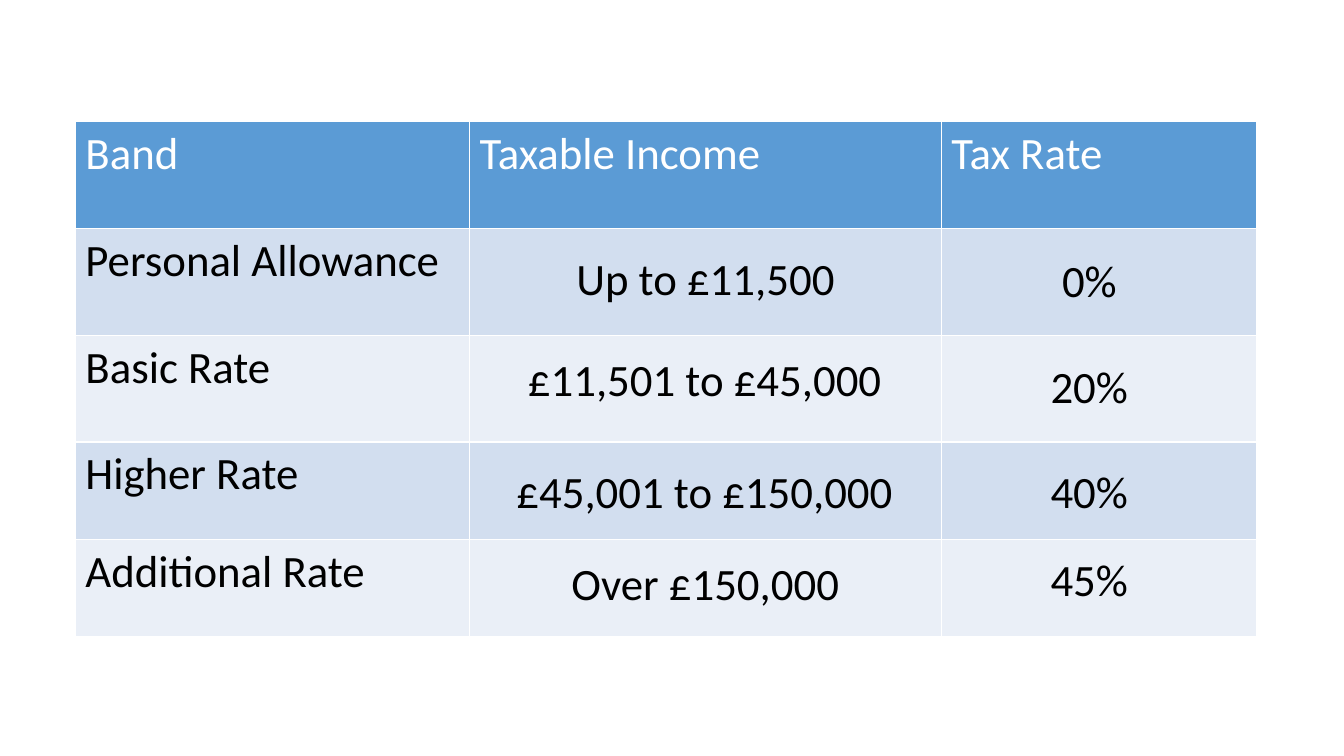
from pptx import Presentation
from pptx import util as u
from pptx.dml.color import RGBColor
from pptx.enum import text

HEADS = ["Band", "Taxable Income", "Tax Rate"]
BANDS = ["Personal Allowance", "Basic Rate", "Higher Rate", "Additional Rate"]
INCOMES = [
    ("Up to £11,500", 6.2, 7.09),
    ("£11,501 to £45,000", 8.74, 9.53),
    ("£45,001 to £150,000", 11.56, 10.11),
    ("Over £150,000", 13.89, 7.34),
]
RATES = [
    ("0%", 6.25, 1.91),
    ("20%", 8.92, 2.49),
    ("40%", 11.56, 2.49),
    ("45%", 13.79, 2.49),
]
LABELS = [(17.82, INCOMES), (27.47, RATES)]
COLS = [9.93, 11.89, 7.95]
ROWS = [2.69, 2.69, 2.69, 2.46, 2.44]
LEFT, TOP, HIGH = 1.9, 3.07, 1.63
COLORS = {
    "head": "5B9BD5",
    "odd": "D2DEEF",
    "even": "EAEFF7",
    "light": "FFFFFF",
    "dark": "000000",
}


def color(name):
    return RGBColor.from_string(COLORS[name])


def write(frame, words, ink):
    run = frame.paragraphs[0].add_run()
    run.text = words
    run.font.name = "Calibri"
    run.font.size = u.Pt(32)
    run.font.bold = False
    run.font.color.rgb = color(ink)


def add_bands(slide):
    frame = slide.shapes.add_table(
        len(ROWS), len(COLS), u.Cm(LEFT), u.Cm(TOP), u.Cm(sum(COLS)), u.Cm(sum(ROWS))
    )
    table = frame.table
    for col, width in zip(table.columns, COLS):
        col.width = u.Cm(width)
    for index, (row, height) in enumerate(zip(table.rows, ROWS)):
        row.height = u.Cm(height)
        shade = "head" if index == 0 else "odd" if index % 2 else "even"
        for cell in row.cells:
            cell.fill.solid()
            cell.fill.fore_color.rgb = color(shade)
    for index, head in enumerate(HEADS):
        write(table.cell(0, index).text_frame, head, "light")
    for index, band in enumerate(BANDS, 1):
        write(table.cell(index, 0).text_frame, band, "dark")


def add_label(slide, words, mid, top, width):
    box = slide.shapes.add_textbox(
        u.Cm(mid - width / 2), u.Cm(top), u.Cm(width), u.Cm(HIGH)
    )
    frame = box.text_frame
    frame.word_wrap = False
    frame.auto_size = text.MSO_AUTO_SIZE.SHAPE_TO_FIT_TEXT
    write(frame, words, "dark")


def main():
    deck = Presentation()
    deck.slide_width = u.Cm(33.87)
    deck.slide_height = u.Cm(19.05)
    slide = deck.slides.add_slide(deck.slide_layouts[6])
    add_bands(slide)
    for mid, labels in LABELS:
        for words, top, width in labels:
            add_label(slide, words, mid, top, width)
    deck.save("out.pptx")


if __name__ == "__main__":
    main()
